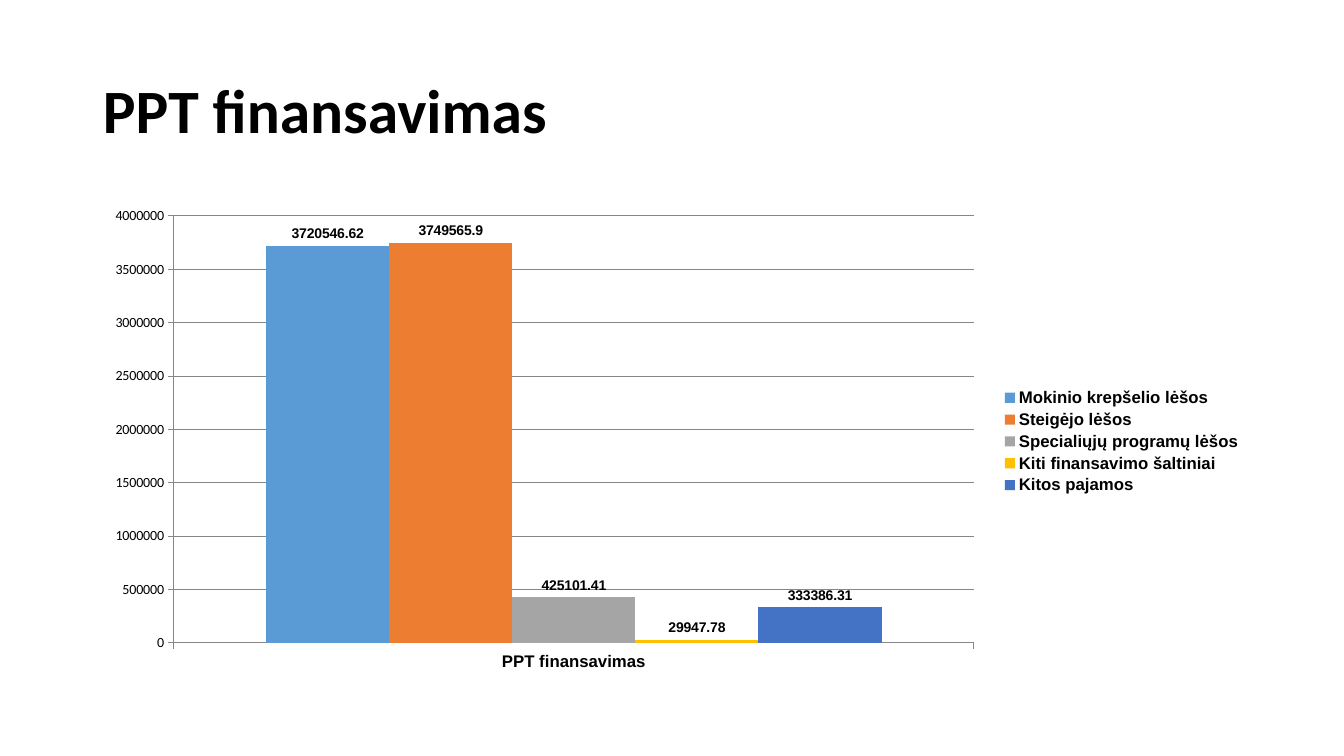
from dataclasses import dataclass

from lxml import etree
from pptx import Presentation
from pptx import util as u
from pptx.chart.data import CategoryChartData
from pptx.dml.color import RGBColor
from pptx.enum import chart as charts
from pptx.enum import text

CHART_NS = "http://schemas.openxmlformats.org/drawingml/2006/chart"


@dataclass(frozen=True)
class Theme:
    title_font: str = "Calibri"
    label_font: str = "Arial"
    ink: str = "000000"
    rule: str = "878787"
    title_size: int = 44
    legend_size: int = 12
    value_size: int = 10


FUNDING = [
    ("Mokinio krepšelio lėšos", 3720546.62, "5B9BD5"),
    ("Steigėjo lėšos", 3749565.9, "ED7D31"),
    ("Specialiųjų programų lėšos", 425101.41, "A5A5A5"),
    ("Kiti finansavimo šaltiniai", 29947.78, "FFC000"),
    ("Kitos pajamos", 333386.31, "4472C4"),
]


class SlideBuilder:
    def __init__(self, slide, theme):
        self.slide = slide
        self.theme = theme

    def style_font(self, font, name, size, bold=False):
        font.name = name
        font.size = u.Pt(size)
        font.bold = bold
        font.color.rgb = RGBColor.from_string(self.theme.ink)

    def style_rule(self, line):
        line.color.rgb = RGBColor.from_string(self.theme.rule)
        line.width = u.Pt(0.75)

    def add_title(self, wording, left, top, width, height):
        title = self.slide.shapes.title
        title.left, title.top = u.Inches(left), u.Inches(top)
        title.width, title.height = u.Inches(width), u.Inches(height)
        frame = title.text_frame
        frame.word_wrap = True
        frame.vertical_anchor = text.MSO_ANCHOR.MIDDLE
        heading = frame.paragraphs[0]
        heading.alignment = text.PP_ALIGN.LEFT
        heading.line_spacing = 0.9
        run = heading.add_run()
        run.text = wording
        self.style_font(run.font, self.theme.title_font, self.theme.title_size, True)

    def add_columns(self, category, sources, left, top, width, height):
        """Add a column chart with one series per funding source."""
        theme = self.theme
        data = CategoryChartData()
        data.categories = [category]
        for name, amount, _ in sources:
            data.add_series(name, [amount])
        chart = self.slide.shapes.add_chart(
            charts.XL_CHART_TYPE.COLUMN_CLUSTERED, u.Inches(left), u.Inches(top),
            u.Inches(width), u.Inches(height), data).chart
        chart.has_title = False
        self.style_font(chart.font, theme.title_font, theme.value_size)

        plot = chart.plots[0]
        plot.gap_width = 150
        plot.overlap = 0
        plot.vary_by_categories = False
        for series, (_, _, color) in zip(plot.series, sources):
            series.format.fill.solid()
            series.format.fill.fore_color.rgb = RGBColor.from_string(color)
            labels = series.data_labels
            labels.show_value = True
            labels.position = charts.XL_LABEL_POSITION.OUTSIDE_END
            self.style_font(labels.font, theme.label_font, theme.value_size, True)

        for axis in (chart.category_axis, chart.value_axis):
            axis.major_tick_mark = charts.XL_TICK_MARK.OUTSIDE
            self.style_rule(axis.format.line)
        self.style_font(chart.category_axis.tick_labels.font,
                        theme.label_font, theme.legend_size, True)
        amounts = chart.value_axis
        amounts.minimum_scale, amounts.maximum_scale = 0, 4000000
        amounts.major_unit = 500000
        amounts.has_major_gridlines = True
        self.style_rule(amounts.major_gridlines.format.line)

        chart.has_legend = True
        chart.legend.position = charts.XL_LEGEND_POSITION.RIGHT
        chart.legend.include_in_layout = False
        self.style_font(chart.legend.font, theme.label_font, theme.legend_size, True)
        self.place_plot(chart, x=0.07, y=0.03, w=0.69, h=0.89)

    def place_plot(self, chart, **fractions):
        """Fix the inner plot area as fractions of the chart frame."""
        def tag(name):
            return f"{{{CHART_NS}}}{name}"

        area = chart.element.find(f".//{tag('plotArea')}")
        for automatic in area.findall(tag("layout")):
            area.remove(automatic)
        layout = etree.Element(tag("layout"))
        manual = etree.SubElement(layout, tag("manualLayout"))
        settings = {"layoutTarget": "inner", "xMode": "edge", "yMode": "edge", **fractions}
        for name, setting in settings.items():
            etree.SubElement(manual, tag(name)).set("val", str(setting))
        area.insert(0, layout)


def main():
    deck = Presentation()
    deck.slide_width, deck.slide_height = u.Inches(13.33), u.Inches(7.5)
    builder = SlideBuilder(deck.slides.add_slide(deck.slide_layouts[5]), Theme())
    topic = "PPT finansavimas"
    builder.add_title(topic, 0.92, 0.4, 11.5, 1.45)
    builder.add_columns(topic, FUNDING, 0.92, 2, 11.5, 4.76)
    deck.save("out.pptx")


if __name__ == "__main__":
    main()
